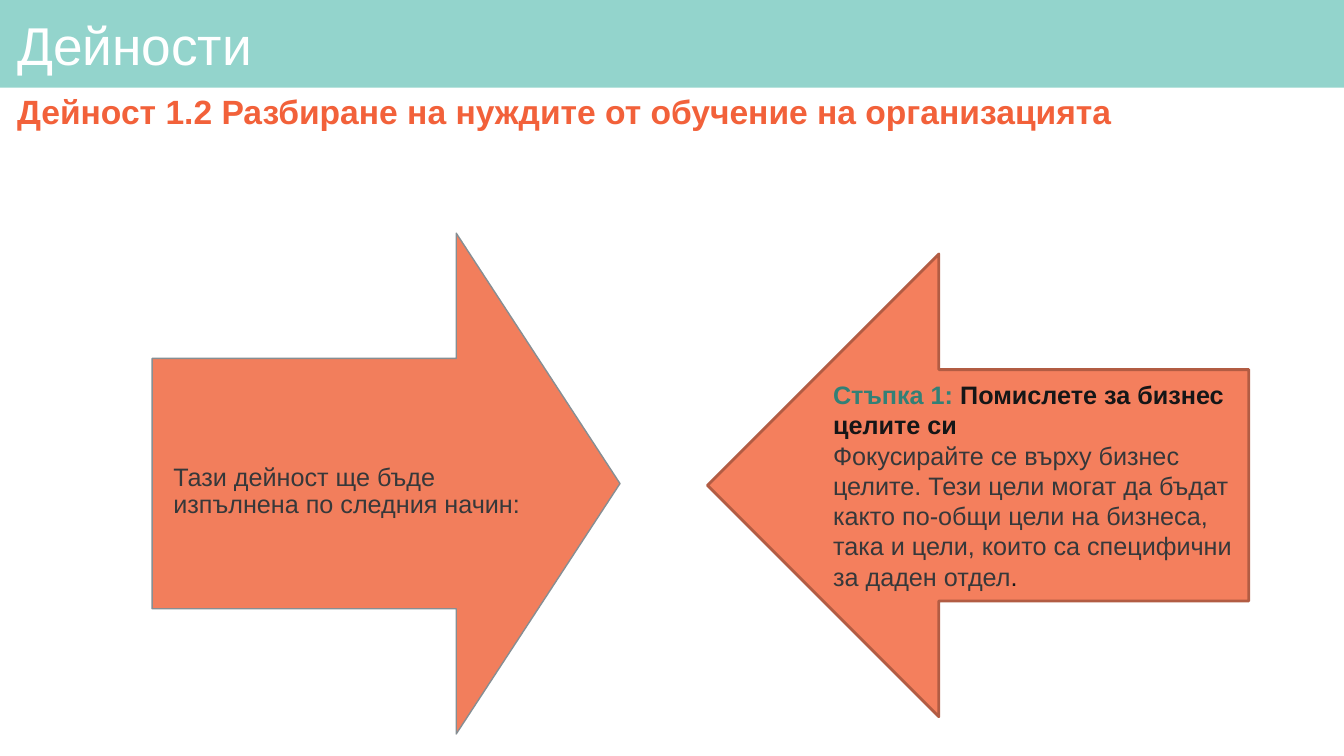
from pptx import Presentation
from pptx.dml.color import RGBColor
from pptx.enum.shapes import MSO_SHAPE as Form
from pptx.enum.text import MSO_ANCHOR as Anchor, PP_ALIGN as Align
from pptx.util import Cm, Pt


def color(code):
    return RGBColor.from_string(code)


def write(para, text, size=18, ink="36383A", bold=False, font="Arial"):
    run = para.add_run()
    run.text = text
    run.font.name = font
    run.font.size = Pt(size)
    run.font.bold = bold
    run.font.color.rgb = color(ink)


class Page:
    mint, white, coral = "93D4CC", "FFFFFF", "F2613A"
    teal, black = "338076", "151617"

    def __init__(self, deck):
        self.slide = deck.slides.add_slide(deck.slide_layouts[6])

    def shape(self, form, box, fill, line=None, width=1, turn=0):
        item = self.slide.shapes.add_shape(form, *map(Cm, box))
        item.shadow.inherit = False
        item.rotation = turn
        item.fill.solid()
        item.fill.fore_color.rgb = color(fill)
        if line:
            item.line.color.rgb = color(line)
            item.line.width = Pt(width)
        else:
            item.line.fill.background()
        return item

    def frame(self, item, pad_x=0.25, pad_y=0.13):
        frame = item.text_frame
        frame.word_wrap = True
        frame.vertical_anchor = Anchor.MIDDLE
        frame.margin_left = frame.margin_right = Cm(pad_x)
        frame.margin_top = frame.margin_bottom = Cm(pad_y)
        return frame

    def label(self, box, text, pad=0.25, align=Align.LEFT, **style):
        item = self.slide.shapes.add_textbox(*map(Cm, box))
        para = self.frame(item, pad, pad).paragraphs[0]
        para.alignment = align
        para.line_spacing = 0.9
        write(para, text, **style)

    def notes(self, item, rows):
        frame = self.frame(item)
        for i, row in enumerate(rows):
            para = frame.add_paragraph() if i else frame.paragraphs[0]
            para.alignment = Align.LEFT
            for text, style in row:
                write(para, text, **style)


def main():
    deck = Presentation()
    deck.slide_width, deck.slide_height = Cm(33.87), Cm(19.05)
    page = Page(deck)

    # Banner and headings
    page.shape(Form.RECTANGLE, (0, 0, 33.87, 2.21), page.mint)
    page.label((0.28, 0.23, 33.17, 1.98), "Дейности", pad=0.15,
               size=38, ink=page.white)
    page.label((0.18, 2.11, 33.17, 1.52),
               "Дейност 1.2 Разбиране на нуждите от обучение на организацията",
               align=Align.JUSTIFY, size=24, ink=page.coral, bold=True)

    # Arrow pointing right, with its text
    right = page.shape(Form.DOWN_ARROW, (3.42, 6.29, 12.62, 11.79), "F27E5C",
                       line="868E93", turn=270)
    right.adjustments[1] = 0.35
    page.label((4.01, 9.8, 9.83, 5.18),
               "Тази дейност ще бъде изпълнена по следния начин:", pad=0.36)

    # Arrow pointing left, with the first step
    left = page.shape(Form.LEFT_ARROW, (17.83, 6.4, 13.64, 11.66), "F47F5D",
                      line="B25C43", width=2)
    page.notes(left, [
        [("Стъпка 1: ", dict(ink=page.teal, bold=True)),
         ("Помислете за бизнес целите си", dict(ink=page.black, bold=True))],
        [("Фокусирайте се върху бизнес целите. Тези цели могат да бъдат "
          "както по-общи цели на бизнеса, така и цели, които са специфични "
          "за даден отдел", {}),
         (".", dict(ink=page.black))],
    ])

    deck.save("out.pptx")


if __name__ == "__main__":
    main()
